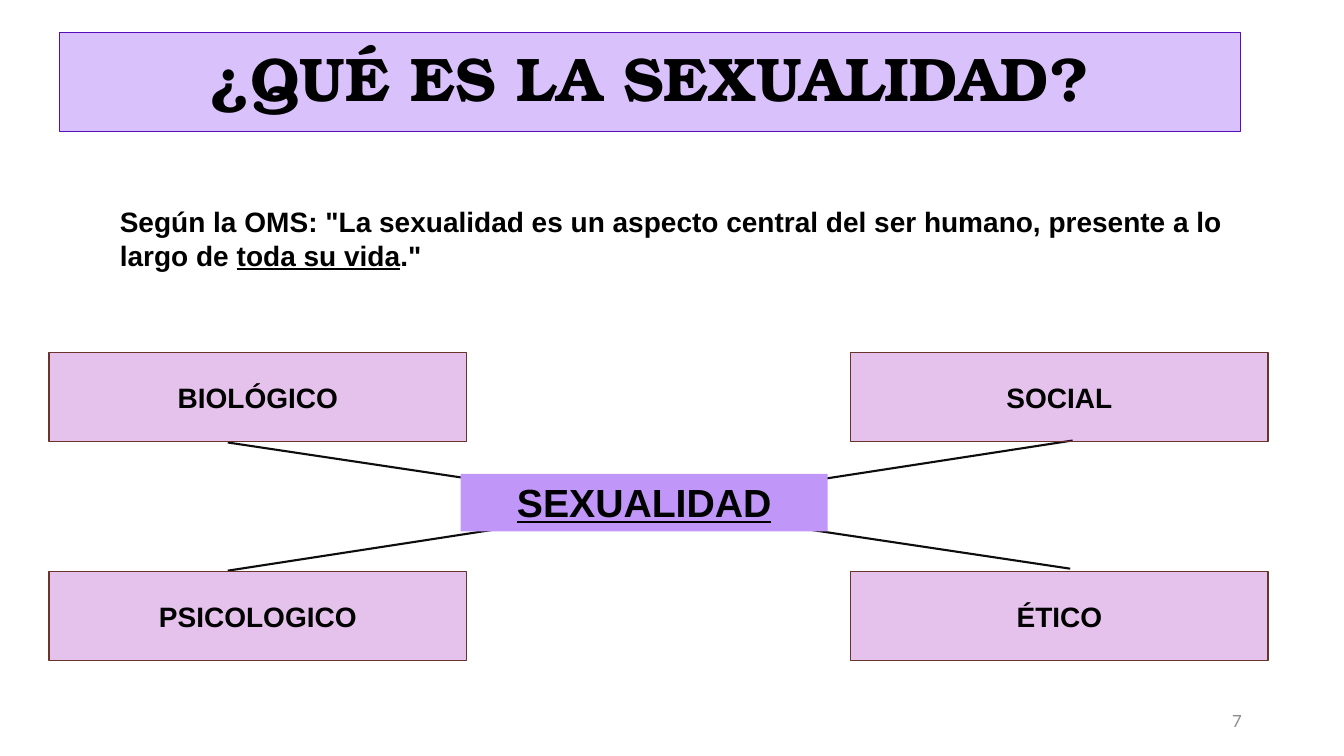
from pptx import Presentation
from pptx.dml.color import RGBColor
from pptx.enum.shapes import MSO_CONNECTOR, MSO_SHAPE
from pptx.enum.text import MSO_ANCHOR, MSO_AUTO_SIZE, PP_ALIGN
from pptx.oxml.ns import qn
from pptx.util import Cm, Pt
from lxml.etree import SubElement

BLACK = RGBColor(0x00, 0x00, 0x00)
INK = RGBColor(0x0D, 0x0D, 0x0D)
GRAY = RGBColor(0x8C, 0x8C, 0x8C)
LILAC = RGBColor(0xD9, 0xC1, 0xFB)
INDIGO = RGBColor(0x56, 0x0D, 0xBB)
PURPLE = RGBColor(0x93, 0x00, 0xB0)
BROWN = RGBColor(0x68, 0x34, 0x2B)
VIOLET = RGBColor(0xC0, 0x97, 0xF8)


def write(shape, text, size=20, font="Arial", color=BLACK, bold=True,
          under=False, align=PP_ALIGN.CENTER, anchor=MSO_ANCHOR.MIDDLE):
    frame = shape.text_frame
    frame.word_wrap = True
    frame.auto_size = MSO_AUTO_SIZE.NONE
    frame.vertical_anchor = anchor
    para = frame.paragraphs[0]
    para.alignment = align
    run = para.add_run()
    run.text = text
    run.font.size = Pt(size)
    run.font.name = font
    run.font.bold = bold
    run.font.underline = under
    run.font.color.rgb = color


deck = Presentation()
deck.slide_width = Cm(33.87)
deck.slide_height = Cm(19.05)
slide = deck.slides.add_slide(deck.slide_layouts[5])
shapes = slide.shapes

title = shapes.title
title.left, title.top = Cm(1.5), Cm(0.81)
title.width, title.height = Cm(29.77), Cm(2.49)
title.fill.solid()
title.fill.fore_color.rgb = LILAC
title.line.color.rgb = INDIGO
title.line.width = Pt(0.5)
write(title, "¿QUÉ ES LA SEXUALIDAD?", size=44, font="TeX Gyre Bonum")
title.text_frame.paragraphs[0].line_spacing = 0.9

number = shapes.add_textbox(Cm(23.93), Cm(17.65), Cm(7.62), Cm(1.02))
write(number, "7", size=12, font="Lato", color=GRAY, bold=False,
      align=PP_ALIGN.RIGHT)

for ends in [(27.03, 11.1, 5.74, 14.38), (5.74, 11.15, 26.97, 14.33)]:
    line = shapes.add_connector(MSO_CONNECTOR.STRAIGHT, *map(Cm, ends))
    line.line.color.rgb = INK
    line.line.width = Pt(1.5)
    SubElement(line._element.spPr, qn("a:effectLst"))

aspects = [["BIOLÓGICO", "SOCIAL"], ["PSICOLOGICO", "ÉTICO"]]
for top, names in zip((8.89, 14.4), aspects):
    for left, name in zip((1.24, 21.44), names):
        box = shapes.add_shape(MSO_SHAPE.RECTANGLE, Cm(left), Cm(top),
                               Cm(10.52), Cm(2.24))
        box.shadow.inherit = False
        box.fill.solid()
        box.fill.fore_color.rgb = PURPLE
        tint = box._element.spPr.find(".//" + qn("a:srgbClr"))
        SubElement(tint, qn("a:alpha"), val="24000")
        box.line.color.rgb = BROWN
        box.line.width = Pt(1)
        write(box, name)

quote = shapes.add_textbox(Cm(2.77), Cm(5.03), Cm(28.3), Cm(3.68))
parts = [
    ('Según la OMS: "La sexualidad es un aspecto central del ser humano, '
     'presente a lo largo de ', False),
    ("toda su vida", True),
    ('."', False),
]
for text, under in parts:
    write(quote, text, under=under, align=PP_ALIGN.JUSTIFY,
          anchor=MSO_ANCHOR.TOP)

hub = shapes.add_shape(MSO_SHAPE.RECTANGLE, Cm(11.61), Cm(11.94),
                       Cm(9.25), Cm(1.45))
hub.shadow.inherit = False
hub.fill.solid()
hub.fill.fore_color.rgb = VIOLET
hub.line.fill.background()
write(hub, "SEXUALIDAD", size=28, under=True, anchor=MSO_ANCHOR.TOP)

deck.save("out.pptx")
